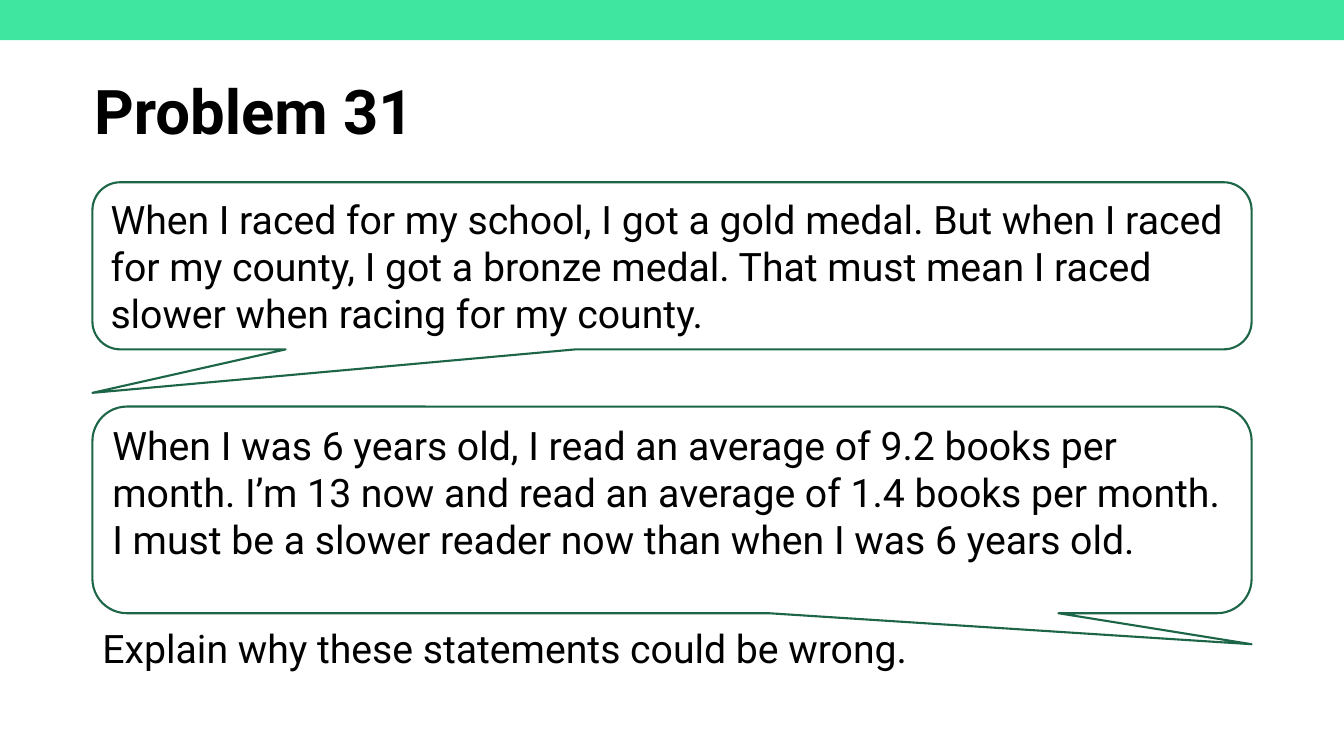
from lxml import etree
from pptx import Presentation
from pptx.dml.color import RGBColor
from pptx.enum.shapes import MSO_SHAPE
from pptx.enum.text import MSO_ANCHOR, PP_ALIGN
from pptx.oxml.ns import qn
from pptx.util import Inches, Pt

SLIDE_WIDTH, SLIDE_HEIGHT = Inches(13.33), Inches(7.5)
COLUMNS, ROWS = 16, 9
MARGIN, CONTENT_WIDTH = 1.1, 13.8

RECTANGLE = MSO_SHAPE.RECTANGLE
SPEECH_BUBBLE = MSO_SHAPE.ROUNDED_RECTANGULAR_CALLOUT
TOP, MIDDLE = MSO_ANCHOR.TOP, MSO_ANCHOR.MIDDLE
LEFT = PP_ALIGN.LEFT

MINT = RGBColor(0x3F, 0xE6, 0xA0)
FOREST = RGBColor(0x1C, 0x65, 0x46)
BLACK = RGBColor(0, 0, 0)
FONT = "Roboto"
BODY_SIZE = 28
CORNER = 0.167

RACING = (
    "When I raced for my school, I got a gold medal. But when I raced for my "
    "county, I got a bronze medal. That must mean I raced slower when racing "
    "for my county."
)
READING = (
    "When I was 6 years old, I read an average of 9.2 books per month. I’m 13 "
    "now and read an average of 1.4 books per month. I must be a slower reader "
    "now than when I was 6 years old."
)


def grid_box(column, row, columns, rows):
    """Turn a place on the 16 by 9 grid into left, top, width and height."""
    return (
        int(SLIDE_WIDTH * column / COLUMNS),
        int(SLIDE_HEIGHT * row / ROWS),
        int(SLIDE_WIDTH * columns / COLUMNS),
        int(SLIDE_HEIGHT * rows / ROWS),
    )


def write_text(shape, text, size=BODY_SIZE, bold=False, anchor=TOP, spacing=1.0):
    frame = shape.text_frame
    frame.text = text
    frame.word_wrap = True
    frame.vertical_anchor = anchor
    paragraph = frame.paragraphs[0]
    paragraph.alignment = LEFT
    paragraph.line_spacing = spacing
    paragraph.space_before = Pt(0)
    font = paragraph.runs[0].font
    font.name = FONT
    font.size = Pt(size)
    font.bold = bold
    font.color.rgb = BLACK


def fill_placeholder(placeholder, box, text, **style):
    placeholder.left, placeholder.top, placeholder.width, placeholder.height = box
    write_text(placeholder, text, spacing=0.9, **style)


def remove_bullet(paragraph):
    properties = paragraph._p.get_or_add_pPr()
    properties.set("marL", "0")
    properties.set("indent", "0")
    etree.SubElement(properties, qn("a:buNone"))


def add_top_band(slide):
    band = slide.shapes.add_shape(RECTANGLE, *grid_box(0, 0, COLUMNS, 0.48))
    band.shadow.inherit = False
    band.fill.solid()
    band.fill.fore_color.rgb = MINT
    band.line.fill.background()


def add_speech_bubble(slide, row, rows, tip, text):
    """Add a bubble whose tip is given as shares of its size from its centre."""
    box = grid_box(MARGIN, row, CONTENT_WIDTH, rows)
    bubble = slide.shapes.add_shape(SPEECH_BUBBLE, *box)
    for index, value in enumerate((*tip, CORNER)):
        bubble.adjustments[index] = value
    bubble.shadow.inherit = False
    bubble.fill.background()
    bubble.line.color.rgb = FOREST
    bubble.line.width = Pt(1.5)
    write_text(bubble, text)


def main():
    presentation = Presentation()
    presentation.slide_width = SLIDE_WIDTH
    presentation.slide_height = SLIDE_HEIGHT
    slide = presentation.slides.add_slide(presentation.slide_layouts[1])

    add_top_band(slide)
    fill_placeholder(
        slide.shapes.title,
        grid_box(1, 0.49, CONTENT_WIDTH, 1.74),
        "Problem 31",
        size=44,
        bold=True,
        anchor=MIDDLE,
    )
    body = slide.placeholders[1]
    fill_placeholder(
        body,
        grid_box(MARGIN, 7.44, CONTENT_WIDTH, 0.66),
        "Explain why these statements could be wrong.",
    )
    remove_bullet(body.text_frame.paragraphs[0])
    add_speech_bubble(slide, 2.17, 1.99, (-0.5, 0.76), RACING)
    add_speech_bubble(slide, 4.84, 2.46, (0.5, 0.65), READING)

    presentation.save("out.pptx")


if __name__ == "__main__":
    main()
